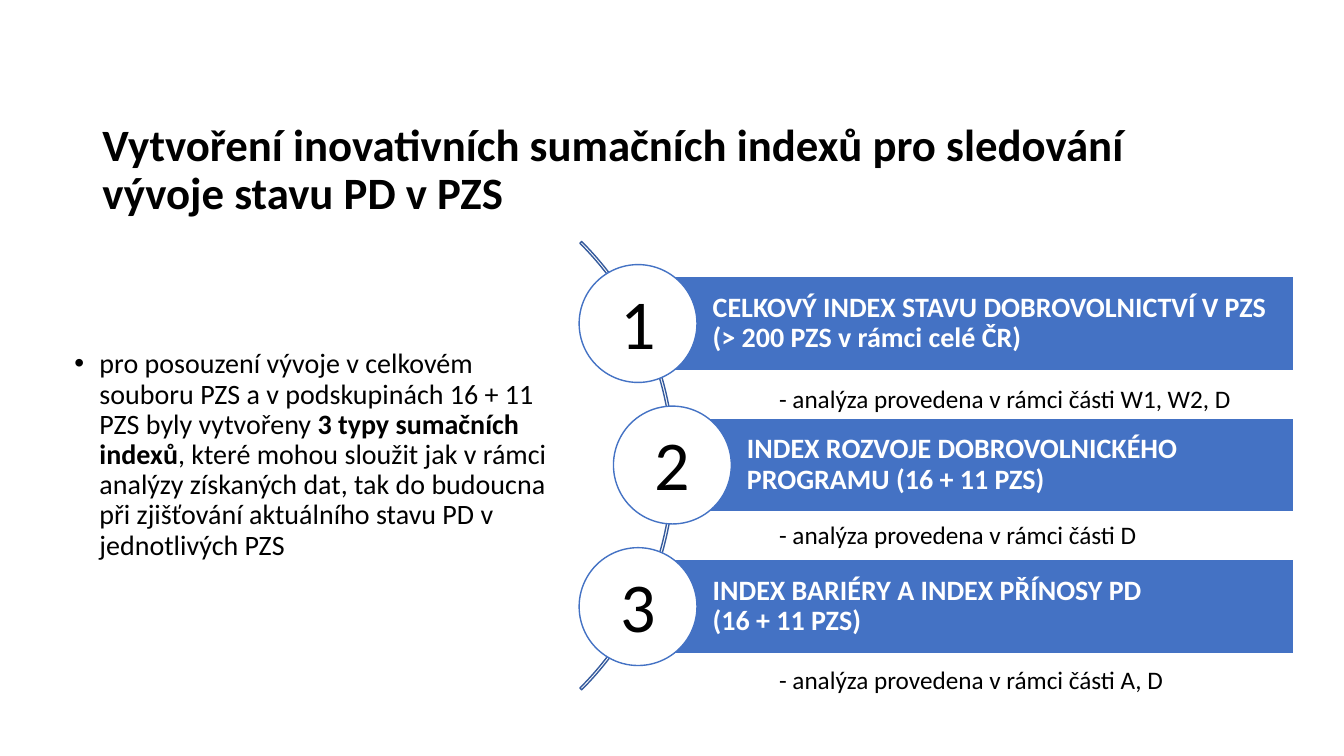
from lxml.etree import SubElement
from pptx import Presentation
from pptx.dml.color import RGBColor
from pptx.enum.shapes import MSO_SHAPE
from pptx.enum.text import MSO_ANCHOR, PP_ALIGN
from pptx.oxml.ns import qn
from pptx.util import Pt

BLUE, DARK, WHITE, BLACK = "4472C4", "365B9D", "FFFFFF", "000000"
ITEMS = [
    ("CELKOVÝ INDEX STAVU DOBROVOLNICTVÍ V PZS\v(> 200 PZS v rámci celé ČR)",
     "- analýza provedena v rámci části W1, W2, D", 0, 72.5),
    ("INDEX ROZVOJE DOBROVOLNICKÉHO PROGRAMU (16 + 11 PZS)",
     "- analýza provedena v rámci části D", 24.5, 69),
    ("INDEX BARIÉRY A INDEX PŘÍNOSY PD\v(16 + 11 PZS)",
     "- analýza provedena v rámci části A, D", 0, 71.5),
]


def color(code):
    """Turn a hex string into a colour."""
    return RGBColor.from_string(code)


def write(shape, parts, size, hue=BLACK, inset=(7.2, 3.6, 7.2, 3.6),
          anchor=MSO_ANCHOR.TOP, align=PP_ALIGN.LEFT, space=0.9, bullet=False):
    """Fill a shape with one paragraph of (text, bold) parts."""
    frame = shape.text_frame
    look = {"word_wrap": True, "vertical_anchor": anchor}
    for side, gap in zip(("left", "top", "right", "bottom"), inset):
        look["margin_" + side] = Pt(gap)
    for name, value in look.items():
        setattr(frame, name, value)
    par = frame.paragraphs[0]
    par.alignment, par.line_spacing = align, space
    if bullet:
        props = par._p.get_or_add_pPr()
        props.set("marL", str(Pt(18)))
        props.set("indent", str(Pt(-18)))
        SubElement(props, qn("a:buFont"), typeface="Arial")
        SubElement(props, qn("a:buChar"), char="•")
    for text, bold in parts:
        for row, line in enumerate(text.split("\v")):
            if row:
                par.add_line_break()
            run = par.add_run()
            run.text = line
            style = {"name": "Calibri", "size": Pt(size), "bold": bold}
            for name, value in style.items():
                setattr(run.font, name, value)
            run.font.color.rgb = color(hue)


def label(slide, box, parts, size, **style):
    """Add a text box."""
    write(slide.shapes.add_textbox(*map(Pt, box)), parts, size, **style)


def draw(slide, kind, box, fill, line):
    """Add a preset shape with a one-point outline."""
    shape = slide.shapes.add_shape(kind, *map(Pt, box))
    shape.shadow.inherit = False
    if fill:
        shape.fill.solid()
        shape.fill.fore_color.rgb = color(fill)
    else:
        shape.fill.background()
    shape.line.color.rgb = color(line)
    shape.line.width = Pt(1)
    return shape


def entry(slide, box, number, title, note, shift, drop):
    """Place one numbered bar and its note inside a box."""
    left, top, width, height = box
    disc = 84.2
    bar = draw(slide, MSO_SHAPE.RECTANGLE,
               (left + shift, top, width - shift, height), BLUE, WHITE)
    write(bar, [(title, True)], 20, WHITE, (53.3, 4.3, 4.3, 4.3),
          MSO_ANCHOR.MIDDLE)
    ring = draw(slide, MSO_SHAPE.OVAL,
                (left + shift - disc / 2, top + (height - disc) / 2, disc, disc),
                WHITE, BLUE)
    write(ring, [(str(number), False)], 50, inset=(0, 0, 0, 3.6),
          anchor=MSO_ANCHOR.MIDDLE, align=PP_ALIGN.CENTER, space=1.0)
    label(slide, (left + 93.6, top + drop, 345, 29), [(note, False)], 18,
          space=1.0)


def chain(slide, box):
    """Place the arc and the three entries along it."""
    left, top, width, height = box
    arc = draw(slide, MSO_SHAPE.BLOCK_ARC,
               (left - 427, top - 91.5, 453, 453), None, DARK)
    for spot, value in enumerate((189, 27, 0.004)):
        arc.adjustments[spot] = value
    pitch = (height - 67) / 2
    for row, item in enumerate(ITEMS):
        entry(slide, (left, top + row * pitch, width, 67), row + 1, *item)


def main():
    """Build and save the slide."""
    deck = Presentation()
    deck.slide_width, deck.slide_height = Pt(960), Pt(540)
    slide = deck.slides.add_slide(deck.slide_layouts[6])
    label(slide, (66, 70, 828, 104.4),
          [("Vytvoření inovativních sumačních indexů pro sledování "
            "vývoje stavu PD v PZS", True)], 32, anchor=MSO_ANCHOR.MIDDLE)
    label(slide, (46, 246.2, 363, 180),
          [("pro posouzení vývoje v celkovém souboru PZS a v podskupinách "
            "16 + 11 PZS byly vytvořeny ", False),
           ("3 typy sumačních indexů", True),
           (", které mohou sloužit jak v rámci analýzy získaných dat, tak do "
            "budoucna při zjišťování aktuálního stavu PD v jednotlivých PZS",
            False)], 20, bullet=True)
    chain(slide, (455.8, 197.6, 468, 269.2))
    deck.save("out.pptx")


if __name__ == "__main__":
    main()
